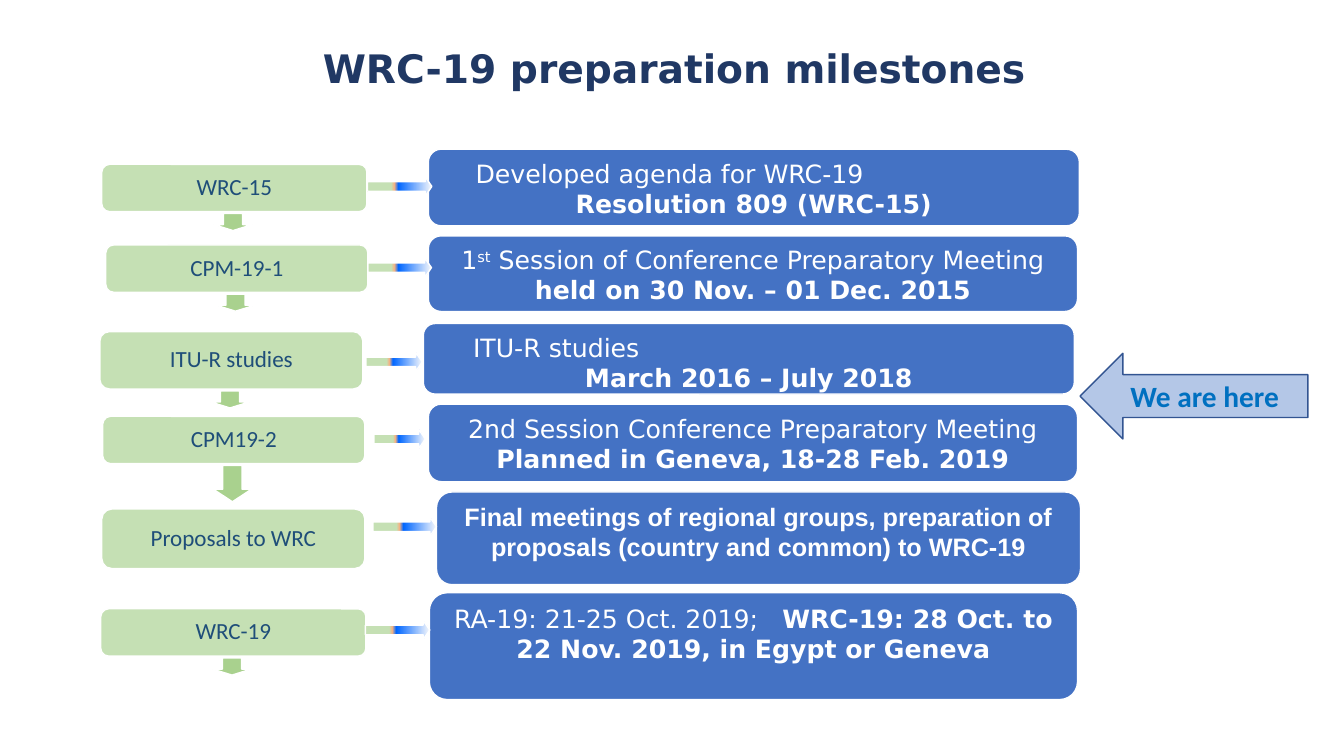
import pptx
import pptx.util
import pptx.dml.color
import pptx.enum.shapes
import pptx.enum.text
import pptx.oxml
import pptx.oxml.ns

Pt = pptx.util.Pt
SHAPE = pptx.enum.shapes.MSO_SHAPE
ALIGN = pptx.enum.text.PP_ALIGN
ANCHOR = pptx.enum.text.MSO_ANCHOR

COLORS = {"title": "203864", "milestone": "4472C4", "stage": "C5E0B4",
          "stage text": "1F4E79", "step": "A9D18E", "white": "FFFFFF",
          "here": "B4C7E7", "here line": "325491", "here text": "0070C0"}
LINK_STOPS = [(0, "F6F8FC"), (52, "0066FF"), (58, "F4B183"), (63, "C5E0B4")]

TITLE = {"name": "DejaVu Sans", "size": Pt(28), "bold": True}
STAGE = {"name": "Calibri", "size": Pt(16.5)}
HERE = {"name": "Calibri", "size": Pt(21), "bold": True}
PLAIN = {"name": "DejaVu Sans", "size": Pt(18)}
BOLD = {**PLAIN, "bold": True}
ARIAL = {**BOLD, "name": "Arial"}


def add_block(kind, box, fill, line="white", rotation=0):
    block = slide.shapes.add_shape(kind, *[Pt(length) for length in box])
    block.shadow.inherit = False
    block.rotation = rotation
    block.fill.solid()
    block.fill.fore_color.rgb = pptx.dml.color.RGBColor.from_string(COLORS[fill])
    block.line.color.rgb = pptx.dml.color.RGBColor.from_string(COLORS[line])
    block.line.width = Pt(1)
    return block


def write(paragraph, text, color, style, extra=None):
    run = paragraph.add_run()
    run.text = text
    for name, value in style.items():
        setattr(run.font, name, value)
    run.font.color.rgb = pptx.dml.color.RGBColor.from_string(COLORS[color])
    for name, value in (extra or {}).items():
        run.font._element.set(name, value)


deck = pptx.Presentation()
deck.slide_width, deck.slide_height = Pt(960), Pt(540)
slide = deck.slides.add_slide(deck.slide_layouts[6])

# Title
title = slide.shapes.add_textbox(Pt(143), Pt(28), Pt(677), Pt(41)).text_frame
title.word_wrap = True
title.vertical_anchor = ANCHOR.MIDDLE
title.paragraphs[0].alignment = ALIGN.CENTER
write(title.paragraphs[0], "WRC-19 preparation milestones", "title", TITLE)

# Stage name and box, link centre and length, step height, milestone box,
# left indent of the first line (None: centred), lines of runs
rows = [
    ("WRC-15", (72.7, 117.4, 189.4, 33.8), (285.5, 133.2, 46), 12.2,
     (306, 106.6, 465, 54.7), 24,
     [[("Developed agenda for WRC-19", PLAIN)],
      [("Resolution 809 (WRC-15)", BOLD)]]),
    ("CPM-19-1", (75.6, 175, 187.2, 33.8), (285.5, 191.2, 45.4), 12.2,
     (306, 168.5, 463.7, 54), None,
     [[("1", PLAIN), ("st", PLAIN, {"baseline": "30000"}),
       (" Session of Conference Preparatory Meeting", PLAIN)],
      [("held on 30 Nov. – 01 Dec. 2015", BOLD)]]),
    ("ITU-R studies", (71.3, 236.9, 187.9, 41), (281.5, 258.5, 40.3), 12.2,
     (302.4, 231.1, 465, 50.4), 26,
     [[("ITU-R studies", PLAIN)],
      [("March 2016 – July 2018", BOLD)]]),
    ("CPM19-2", (73.4, 297.4, 187.2, 33.8), (285.5, 313.6, 36.7), 25.9,
     (306, 288.7, 463.7, 55.4), None,
     [[("2nd Session Conference Preparatory Meeting", PLAIN)],
      [("Planned in Geneva, 18-28 Feb. 2019", BOLD)]]),
    ("Proposals to WRC", (72.7, 363.6, 187.9, 42.5), (289.1, 376.2, 45.4), None,
     (311.8, 351.4, 460, 66.2), None,
     [[("Final meetings of regional groups, preparation of proposals "
        "(country and common) to WRC-19", ARIAL)]]),
    ("WRC-19", (72, 434.9, 189.4, 33.8), (284, 450, 46), 12.2,
     (306.7, 423.4, 463, 76.3), None,
     [[("RA-19: 21-25 Oct. 2019;", PLAIN), (" ", PLAIN, {"spc": "1140"}),
       ("WRC-19: 28 Oct. to 22 Nov. 2019, in Egypt or Geneva", BOLD)]]),
]
LINK_WIDTH, STEP_WIDTH, STEP_GAP = 13.7, 27.4, 1.3

for name, stage_box, link_place, step_height, milestone_box, indent, lines in rows:
    # Milestone
    milestone = add_block(SHAPE.ROUNDED_RECTANGLE, milestone_box, "milestone").text_frame
    milestone.word_wrap = True
    milestone.vertical_anchor = ANCHOR.TOP
    for number, line in enumerate(lines):
        paragraph = milestone.add_paragraph() if number else milestone.paragraphs[0]
        paragraph.alignment = ALIGN.CENTER
        if indent and number == 0:
            paragraph.alignment = ALIGN.LEFT
            paragraph._p.get_or_add_pPr().set("marL", str(Pt(indent)))
        for text, style, *extra in line:
            write(paragraph, text, "white", style, *extra)

    # Stage
    stage = add_block(SHAPE.ROUNDED_RECTANGLE, stage_box, "stage").text_frame
    stage.word_wrap = True
    stage.vertical_anchor = ANCHOR.MIDDLE
    stage.paragraphs[0].alignment = ALIGN.CENTER
    stage.paragraphs[0].line_spacing = 0.9
    write(stage.paragraphs[0], name, "stage text", STAGE)

    # Step to the next stage
    arrows = []
    if step_height:
        left, top, width, height = stage_box
        step_box = (left + width / 2 - 1 - STEP_WIDTH / 2, top + height + STEP_GAP,
                    STEP_WIDTH, step_height)
        arrows.append(add_block(SHAPE.UP_ARROW, step_box, "step", rotation=180))

    # Link from stage to milestone
    x, y, length = link_place
    link_box = (x - LINK_WIDTH / 2, y - length / 2, LINK_WIDTH, length)
    link = add_block(SHAPE.UP_ARROW, link_box, "stage", rotation=90)
    link.fill.gradient()
    link.fill.gradient_angle = 270
    stops = link._element.spPr.find(".//" + pptx.oxml.ns.qn("a:gsLst"))
    for stop in list(stops):
        stops.remove(stop)
    for position, color in LINK_STOPS:
        stops.append(pptx.oxml.parse_xml(
            f'<a:gs {pptx.oxml.ns.nsdecls("a")} pos="{position * 1000}">'
            f'<a:srgbClr val="{color}"/></a:gs>'))
    for arrow in arrows + [link]:
        arrow.adjustments[0], arrow.adjustments[1] = 0.5, 0.35

# Current position
here = add_block(SHAPE.DOWN_ARROW, (822.2, 201.6, 61.2, 162.7), "here", "here line", 90)
here.text_frame.word_wrap = True
here.text_frame.vertical_anchor = ANCHOR.MIDDLE
here.text_frame._txBody.bodyPr.set("vert", "vert270")
here.text_frame.paragraphs[0].alignment = ALIGN.CENTER
write(here.text_frame.paragraphs[0], "We are here", "here text", HERE)

deck.save("out.pptx")
